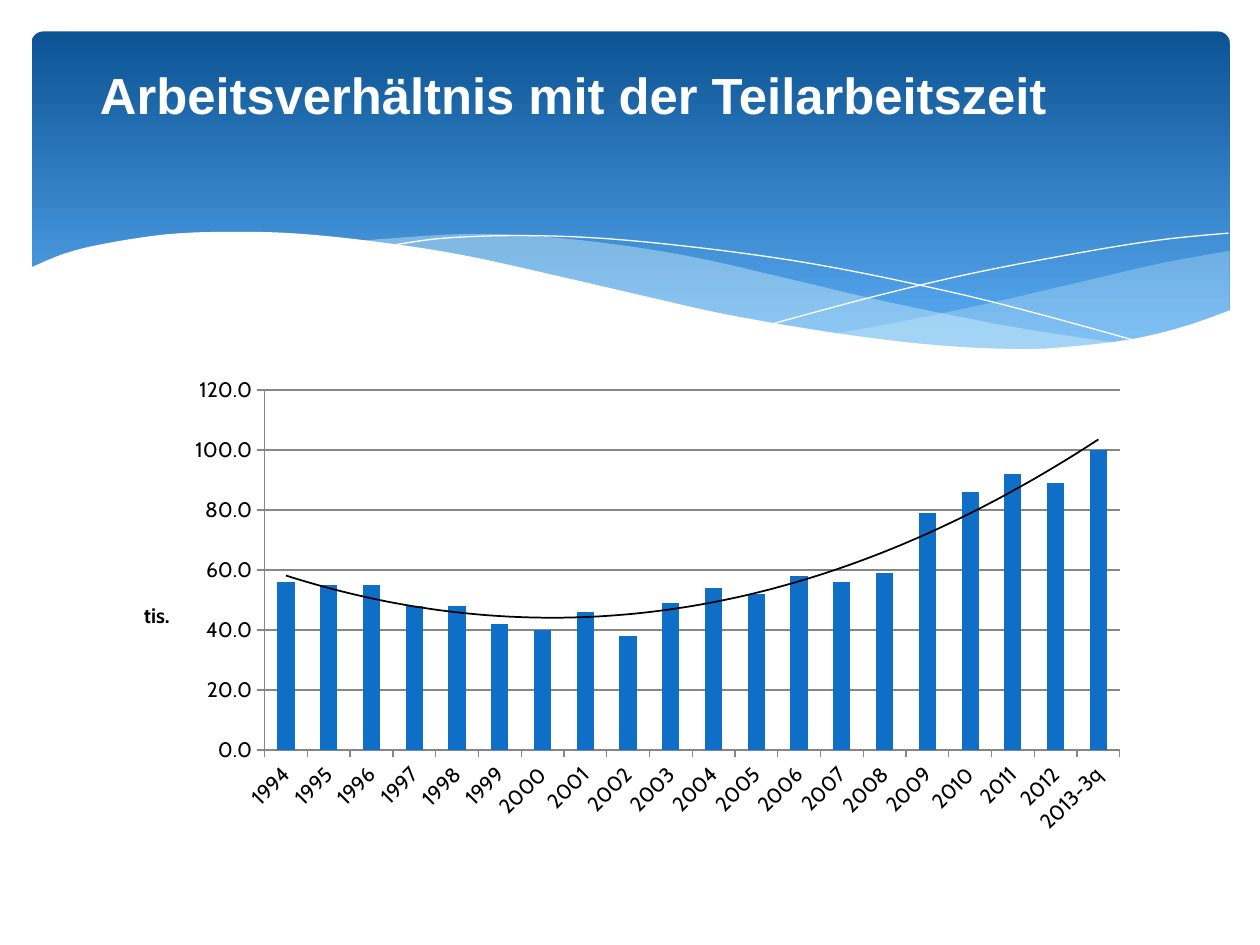
from lxml import etree
from pptx import Presentation
from pptx import util as u
from pptx.chart.data import CategoryChartData
from pptx.dml.color import RGBColor
from pptx.enum import chart as ch, shapes, text
from pptx.oxml import parse_xml
from pptx.oxml.ns import nsdecls, qn

NAVY, SKY = RGBColor(0x0B, 0x53, 0x94), RGBColor(0x59, 0xAA, 0xF2)
ICE, WHITE = RGBColor(0xDB, 0xF5, 0xF9), RGBColor(0xFF, 0xFF, 0xFF)
BLUE, GRAY, BLACK = RGBColor(0x0F, 0x6F, 0xC6), RGBColor(0x86, 0x86, 0x86), RGBColor(0, 0, 0)

TITLE = "Arbeitsverhältnis mit der Teilarbeitszeit"
YEARS = [str(y) for y in range(1994, 2013)] + ["2013-3q"]
VALUES = [56, 55, 55, 48, 48, 42, 40, 46, 38, 49, 54, 52, 58, 56, 59, 79, 86, 92, 89, 100]
UNIT = "tis."

BANDS = [
    {"alpha": 29, "edges": [
        [(9.76, 1.99), (9.21, 2.09), (8.61, 2.23), (7.79, 2.42), (7.06, 2.57), (6.61, 2.65)],
        [(6.61, 2.65), (7.18, 2.72), (7.81, 2.77), (8.35, 2.77), (8.89, 2.72), (9.35, 2.61), (9.76, 2.47)]]},
    {"alpha": 40, "edges": [
        [(8.93, 2.73), (8.07, 2.6), (7.06, 2.4), (6.29, 2.22), (5.55, 2.05), (4.89, 1.94),
         (4.2, 1.87), (3.61, 1.86), (2.86, 1.91)],
        [(2.86, 1.91), (3.62, 2.03), (4.49, 2.22), (5.3, 2.4), (6.18, 2.58), (6.95, 2.7),
         (7.61, 2.77), (8.18, 2.78), (8.93, 2.73)]]},
]
STRANDS = [
    [(3.09, 1.95), (3.53, 1.89), (4.16, 1.87), (4.89, 1.9), (5.82, 2), (6.65, 2.13),
     (7.6, 2.33), (8.31, 2.51), (9.07, 2.72)],
    [(6.13, 2.57), (6.95, 2.35), (7.76, 2.16), (8.66, 1.99), (9.24, 1.9), (9.75, 1.85)],
]
FRONT = {"alpha": 100, "edges": [
    [(9.77, 2.46), (9.4, 2.59), (8.99, 2.69), (8.5, 2.75), (8.09, 2.77), (7.44, 2.74), (6.68, 2.65),
     (5.79, 2.5), (5.03, 2.33), (4.47, 2.2), (3.65, 2.02), (2.92, 1.91), (2.3, 1.85), (1.77, 1.84),
     (1.32, 1.86), (0.85, 1.93), (0.52, 2.01), (0.23, 2.13)],
    [(0.23, 3.29), (9.77, 3.29)]]}


def smooth(pts, steps=8):
    """Return points on a Catmull-Rom curve through pts."""
    padded = [pts[0], *pts, pts[-1]]
    out = [pts[0]]
    for a, b, c, d in zip(padded, padded[1:], padded[2:], padded[3:]):
        for t in (i / steps for i in range(1, steps + 1)):
            out.append(tuple(
                (2 * q + (r - p) * t + (2 * p - 5 * q + 4 * r - s) * t ** 2
                 + (3 * q - p - 3 * r + s) * t ** 3) / 2
                for p, q, r, s in zip(a, b, c, d)))
    return out


def draw(slide, edges, close):
    """Draw joined smooth edges as one freeform."""
    pts = [(u.Inches(x), u.Inches(y)) for edge in edges for x, y in smooth(edge)]
    fb = slide.shapes.build_freeform(*pts[0])
    fb.add_line_segments(pts[1:], close=close)
    sp = fb.convert_to_shape()
    sp.shadow.inherit = False
    return sp


def add_band(slide, band, color):
    """Add a filled wave with the given opacity."""
    sp = draw(slide, band["edges"], True)
    sp.fill.solid()
    sp.fill.fore_color.rgb = color
    sp.line.fill.background()
    clr = sp.element.spPr.find(qn("a:solidFill"))[0]
    etree.SubElement(clr, qn("a:alpha")).set("val", str(band["alpha"] * 1000))


def add_header(slide):
    """Add the gradient panel and its waves."""
    sp = slide.shapes.add_shape(shapes.MSO_SHAPE.ROUNDED_RECTANGLE,
                                *map(u.Inches, (0.25, 0.25, 9.51, 2.7)))
    sp.adjustments[0] = 0.034
    sp.shadow.inherit = False
    sp.line.fill.background()
    sp.fill.gradient()
    sp.fill.gradient_angle = 270
    for stop, pos, color in zip(sp.fill.gradient_stops, (0, 0.9), (NAVY, SKY)):
        stop.position, stop.color.rgb = pos, color
    for band in BANDS:
        add_band(slide, band, ICE)
    for strand in STRANDS:
        sp = draw(slide, [strand], False)
        sp.fill.background()
        sp.line.color.rgb, sp.line.width = WHITE, u.Pt(0)
    add_band(slide, FRONT, WHITE)


def style(font, **values):
    """Set font attributes from format values."""
    color = values.pop("color", None)
    for name, value in values.items():
        setattr(font, name, value)
    if color is not None:
        font.color.rgb = color


def add_title(slide):
    """Format the title and bring it in front of the header."""
    sp = slide.shapes.title
    sp.left, sp.top, sp.width, sp.height = map(u.Inches, (0.17, 0.25, 8.77, 1))
    tf = sp.text_frame
    tf.text, tf.word_wrap, tf.vertical_anchor = TITLE, True, text.MSO_ANCHOR.MIDDLE
    p = tf.paragraphs[0]
    p.alignment = text.PP_ALIGN.CENTER
    style(p.runs[0].font, name="Arial", size=u.Pt(29), bold=True, color=WHITE)
    sp.element.getparent().append(sp.element)


def place(parent, index, target="", **shares):
    """Give a chart part a manual layout in shares of the chart."""
    old = parent.find(qn("c:layout"))
    if old is not None:
        parent.remove(old)
    modes = '<c:xMode val="edge"/><c:yMode val="edge"/>'
    sizes = "".join(f'<c:{k} val="{v}"/>' for k, v in shares.items())
    parent.insert(index, parse_xml(f'<c:layout {nsdecls("c")}><c:manualLayout>{target}{modes}{sizes}'
                                   '</c:manualLayout></c:layout>'))


def add_column_chart(slide):
    """Add the column chart with its polynomial trend line."""
    data = CategoryChartData(number_format="#,##0.0")
    data.categories = YEARS
    data.add_series("Series 1", VALUES)
    chart = slide.shapes.add_chart(ch.XL_CHART_TYPE.COLUMN_CLUSTERED,
                                   *map(u.Inches, (0.95, 2.93, 8.1, 3.77)), data).chart
    chart.has_legend = chart.has_title = False
    style(chart.font, name="Cabin", size=u.Pt(10), color=BLACK)
    plot = chart.plots[0]
    plot.gap_width, plot.vary_by_categories = 150, False
    fill = plot.series[0].format.fill
    fill.solid()
    fill.fore_color.rgb = BLUE

    cat, val = chart.category_axis, chart.value_axis
    for axis in (cat, val):
        style(axis.tick_labels.font, name="Cabin", size=u.Pt(12), color=BLACK)
        axis.major_tick_mark = ch.XL_TICK_MARK.OUTSIDE
        axis.format.line.color.rgb, axis.format.line.width = GRAY, u.Pt(0.75)
    cat.element_rotation = None
    chart.element.xpath(".//c:catAx/c:txPr/a:bodyPr")[0].set("rot", "-2700000")
    val.minimum_scale, val.maximum_scale, val.major_unit = 0, 120, 20
    val.has_major_gridlines = True
    grid = val.major_gridlines.format.line
    grid.color.rgb, grid.width = GRAY, u.Pt(0.75)
    val.tick_labels.number_format = "#,##0.0"
    val.tick_labels.number_format_is_linked = False
    tf = val.axis_title.text_frame
    tf.text = UNIT
    style(tf.paragraphs[0].runs[0].font, name="Cabin", size=u.Pt(12), bold=True, color=BLACK)

    title = chart.element.xpath(".//c:valAx/c:title")[0]
    title.xpath(".//a:bodyPr")[0].set("rot", "0")
    place(title, 1, x=0.02, y=0.48)
    place(chart.element.xpath(".//c:plotArea")[0], 0, '<c:layoutTarget val="inner"/>',
          x=0.142, y=0.044, w=0.838, h=0.758)
    chart.element.xpath(".//c:ser/c:cat")[0].addprevious(parse_xml(
        f'<c:trendline {nsdecls("c", "a")}><c:spPr><a:ln w="12700"><a:solidFill>'
        f'<a:srgbClr val="{BLACK}"/></a:solidFill></a:ln></c:spPr><c:trendlineType val="poly"/>'
        '<c:order val="2"/><c:dispRSqr val="0"/><c:dispEq val="0"/></c:trendline>'))


def main():
    """Build the slide."""
    prs = Presentation()
    prs.slide_width, prs.slide_height = u.Inches(10), u.Inches(7.5)
    slide = prs.slides.add_slide(prs.slide_layouts[5])
    add_header(slide)
    add_title(slide)
    add_column_chart(slide)
    prs.save("out.pptx")


if __name__ == "__main__":
    main()
